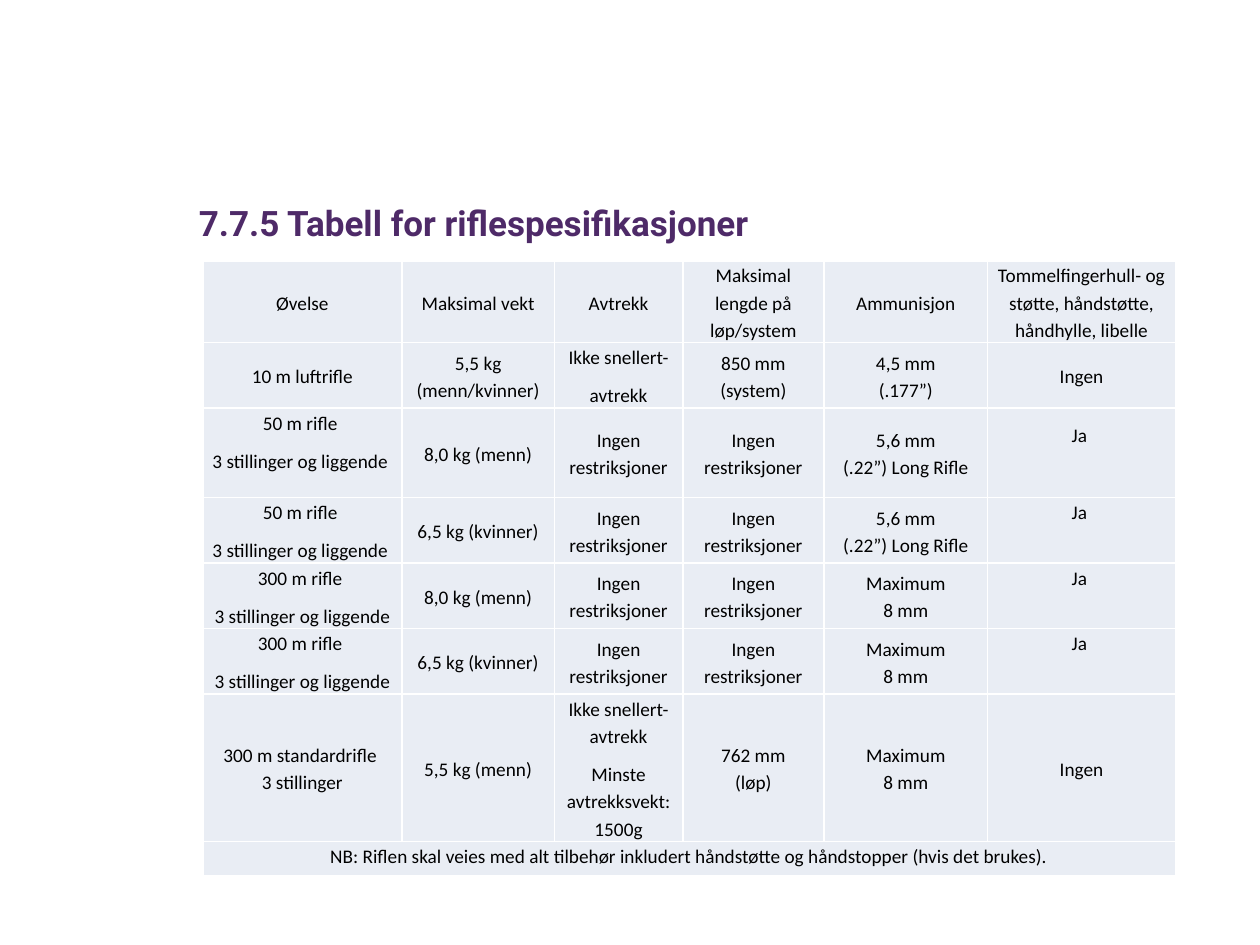
from dataclasses import dataclass

from lxml import etree
from pptx import Presentation
from pptx.dml.color import RGBColor
from pptx.enum.text import MSO_ANCHOR, PP_ALIGN
from pptx.oxml.ns import qn
from pptx.util import Inches, Pt

LEFT, CENTER = PP_ALIGN.LEFT, PP_ALIGN.CENTER
TOP, MIDDLE = MSO_ANCHOR.TOP, MSO_ANCHOR.MIDDLE


@dataclass(frozen=True)
class Theme:
    title: str = "4E2A68"
    ink: str = "000000"
    cell: str = "E9EDF4"
    line: str = "FFFFFF"
    title_font: str = "Roboto"
    cell_font: str = "Calibri"
    title_size: int = 20
    cell_size: int = 11


THEME = Theme()

# A tuple holds the paragraphs of one cell.
TITLE = "7.7.5 Tabell for riflespesifikasjoner"
FREE = "Ingen restriksjoner"
POSES = "3 stillinger og liggende"
SMALL = ("50 m rifle ", POSES + " ")
LARGE = ("300 m rifle ", POSES)
LONG = "5,6 mm\n(.22”) Long Rifle"
MAX = "Maximum\n8 mm"
YES = "Ja "
ROWS = [
    ["Øvelse", "Maksimal vekt", "Avtrekk", "Maksimal lengde på løp/system",
     "Ammunisjon",
     "Tommelfingerhull- og støtte, håndstøtte, håndhylle, libelle"],
    ["10 m luftrifle", "5,5 kg\n(menn/kvinner)", ("Ikke snellert-", "avtrekk"),
     "850 mm\n(system)", "4,5 mm\n(.177”)", "Ingen"],
    [SMALL, "8,0 kg (menn)", FREE, FREE, LONG, YES],
    [SMALL, "6,5 kg (kvinner)", FREE, FREE, LONG, YES],
    [LARGE, "8,0 kg (menn)", FREE, FREE, MAX, YES],
    [LARGE, "6,5 kg (kvinner)", FREE, FREE, MAX, YES],
    ["300 m standardrifle \n3 stillinger", "5,5 kg (menn)",
     ("Ikke snellert-avtrekk", "Minste avtrekksvekt: 1500g"),
     "762 mm\n(løp)", MAX, "Ingen"],
    ["NB: Riflen skal veies med alt tilbehør inkludert håndstøtte og "
     "håndstopper (hvis det brukes)."],
]
WIDTHS = [1.58, 1.21, 1.02, 1.12, 1.3, 1.49]
HEIGHTS = [0.65, 0.52, 0.71, 0.52, 0.52, 0.52, 1.17, 0.27]
TALL = (2, 0)  # this cell keeps one line of room below its text


def write(frame, text, *, font, size, color, bold=False, align=LEFT,
          spacing=1.0, gap=0):
    parts = (text,) if isinstance(text, str) else text
    frame.word_wrap = True
    for i, part in enumerate(parts):
        para = frame.add_paragraph() if i else frame.paragraphs[0]
        para.text = part
        para.alignment = align
        para.line_spacing = spacing
        para.space_before = Pt(gap if i else 0)
        for run in para.runs:
            run.font.name = font
            run.font.size = Pt(size)
            run.font.bold = bold
            run.font.color.rgb = RGBColor.from_string(color)


def border(cell):
    props = cell._tc.get_or_add_tcPr()
    for side in ("lnL", "lnR", "lnT", "lnB"):
        line = etree.SubElement(props, qn("a:" + side), w=str(Pt(1)))
        fill = etree.SubElement(line, qn("a:solidFill"))
        etree.SubElement(fill, qn("a:srgbClr"), val=THEME.line)


def fill_cell(cell, text, anchor, foot):
    cell.margin_left = cell.margin_right = Inches(0.04)
    cell.margin_top, cell.margin_bottom = 0, Inches(foot)
    cell.vertical_anchor = anchor
    write(cell.text_frame, text, font=THEME.cell_font, size=THEME.cell_size,
          color=THEME.ink, align=CENTER, spacing=1.15, gap=6)


def add_specs(slide):
    shape = slide.shapes.add_table(
        len(ROWS), len(WIDTHS), Inches(1.61), Inches(2.07),
        Inches(sum(WIDTHS)), Inches(sum(HEIGHTS)))
    table = shape.table
    table.first_row = table.horz_banding = False
    for col, width in zip(table.columns, WIDTHS):
        col.width = Inches(width)
    for row, height in zip(table.rows, HEIGHTS):
        row.height = Inches(height)
    for cell in table.iter_cells():
        border(cell)
        cell.fill.solid()
        cell.fill.fore_color.rgb = RGBColor.from_string(THEME.cell)
    last = len(ROWS) - 1
    table.cell(last, 0).merge(table.cell(last, len(WIDTHS) - 1))
    for r, row in enumerate(ROWS):
        for c, text in enumerate(row):
            foot = 0.3 if text == YES else 0.2 if (r, c) == TALL else 0
            fill_cell(table.cell(r, c), text, TOP if r == last else MIDDLE,
                      foot)


def main():
    deck = Presentation()
    deck.slide_width, deck.slide_height = Inches(10), Inches(7.5)
    slide = deck.slides.add_slide(deck.slide_layouts[6])
    box = slide.shapes.add_textbox(
        Inches(1.48), Inches(1.55), Inches(8.02), Inches(0.4))
    write(box.text_frame, TITLE, font=THEME.title_font, size=THEME.title_size,
          color=THEME.title, bold=True)
    add_specs(slide)
    deck.save("out.pptx")


if __name__ == "__main__":
    main()
